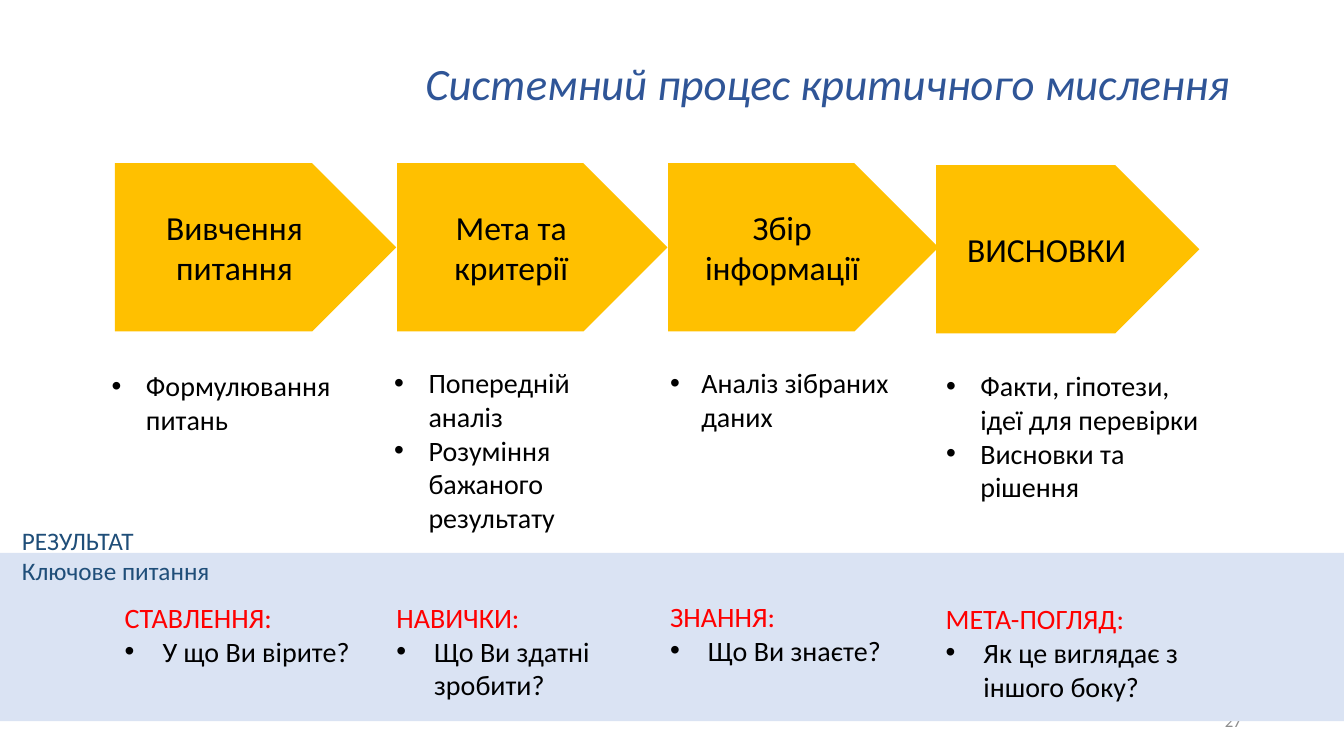
from dataclasses import dataclass

from lxml.etree import SubElement
from pptx import Presentation
from pptx.dml.color import RGBColor
from pptx.enum.shapes import MSO_SHAPE as Shape
from pptx.enum.text import MSO_ANCHOR as Anchor, MSO_AUTO_SIZE as AutoSize, PP_ALIGN as Align
from pptx.oxml.ns import qn
from pptx.util import Pt

TITLE = "Системний процес критичного мислення"
RESULT_LABEL = ["РЕЗУЛЬТАТ", "Ключове питання"]
PAGE_NUMBER = "27"

# Boxes are (left, top, width, height) in points.
STAGES = [
    {
        "name": "Вивчення питання", "arrow": (82, 116.6, 201, 120.2),
        "tasks": ["Формулювання питань"], "tasks_box": (72.7, 260, 187.2, 55.4), "indent": 24.5,
        "focus": "СТАВЛЕННЯ:", "question": "У що Ви вірите?", "question_box": (82, 425.5, 193, 55.4),
    },
    {
        "name": "Мета та критерії", "arrow": (283.6, 116.6, 193.2, 120.2),
        "tasks": ["Попередній аналіз", "Розуміння бажаного результату"],
        "tasks_box": (274.5, 257.8, 167, 128.2), "indent": 24.5,
        "focus": "НАВИЧКИ:", "question": "Що Ви здатні зробити?", "question_box": (276, 425.5, 178.6, 80),
    },
    {
        "name": "Збір інформації", "arrow": (477.2, 116.6, 193.2, 120.2),
        "tasks": ["Аналіз зібраних даних"], "tasks_box": (471.6, 257.8, 191.5, 128.2), "indent": 22.3,
        "focus": "ЗНАННЯ:", "question": "Що Ви знаєте?", "question_box": (471.6, 424.8, 224.6, 55.4),
    },
    {
        "name": "ВИСНОВКИ", "arrow": (668.7, 118, 188, 120.2),
        "tasks": ["Факти, гіпотези, ідеї для перевірки", "Висновки та рішення"],
        "tasks_box": (668.7, 260, 206.6, 104.4), "indent": 24.5,
        "focus": "МЕТА-ПОГЛЯД:", "question": "Як це виглядає з іншого боку?",
        "question_box": (668.4, 426.4, 206.6, 80),
    },
]
TITLE_BOX = (296.6, 9.4, 620.6, 104.4)
NUMBER_BOX = (678.2, 500.4, 216, 28.8)
BAND_BOX = (0, 394.9, 960, 120.2)
RESULT_BOX = (8.6, 371.5, 173.5, 51.1)
QUESTION_INDENT = 27


@dataclass(frozen=True)
class Theme:
    font: str = "Calibri"
    title: str = "2F5597"
    arrow: str = "FFC000"
    band: str = "DAE3F3"
    text: str = "000000"
    focus: str = "FF0000"
    result: str = "1F4E79"
    number: str = "8C8C8C"
    title_size: int = 32
    arrow_size: int = 24
    body_size: int = 20
    result_size: int = 18
    number_size: int = 12


THEME = Theme()


def points(box):
    return [Pt(length) for length in box]


def style(paragraph, size, color, align=Align.LEFT, italic=False):
    paragraph.alignment = align
    for run in paragraph.runs:
        run.font.name = THEME.font
        run.font.size = Pt(size)
        run.font.italic = italic
        run.font.color.rgb = RGBColor.from_string(color)


def add_bullet(paragraph, indent):
    properties = paragraph._p.get_or_add_pPr()
    properties.set("marL", str(Pt(indent)))
    properties.set("indent", str(-Pt(indent)))
    SubElement(properties, qn("a:buFont"), typeface="Arial")
    SubElement(properties, qn("a:buChar"), char="•")


def add_text(slide, box, lines, size, align=Align.LEFT, anchor=Anchor.TOP):
    """Lines are (text, color, bullet indent or 0)."""
    frame = slide.shapes.add_textbox(*points(box)).text_frame
    frame.word_wrap = True
    frame.vertical_anchor = anchor
    for position, (text, color, indent) in enumerate(lines):
        paragraph = frame.add_paragraph() if position else frame.paragraphs[0]
        paragraph.text = text
        if indent:
            add_bullet(paragraph, indent)
        style(paragraph, size, color, align)


def add_filled(slide, kind, box, color):
    shape = slide.shapes.add_shape(kind, *points(box))
    shape.shadow.inherit = False
    shape.fill.solid()
    shape.fill.fore_color.rgb = RGBColor.from_string(color)
    shape.line.fill.background()
    return shape


def add_title(slide):
    title = slide.shapes.title
    title.left, title.top, title.width, title.height = points(TITLE_BOX)
    frame = title.text_frame
    frame.text = TITLE
    frame.word_wrap = True
    frame.auto_size = AutoSize.NONE
    frame.vertical_anchor = Anchor.MIDDLE
    frame.paragraphs[0].line_spacing = 0.9
    style(frame.paragraphs[0], THEME.title_size, THEME.title, italic=True)


def add_arrow(slide, stage):
    frame = add_filled(slide, Shape.PENTAGON, stage["arrow"], THEME.arrow).text_frame
    frame.text = stage["name"]
    frame.word_wrap = True
    frame.vertical_anchor = Anchor.MIDDLE
    style(frame.paragraphs[0], THEME.arrow_size, THEME.text, Align.CENTER)


def main():
    deck = Presentation()
    deck.slide_width, deck.slide_height = Pt(960), Pt(540)
    slide = deck.slides.add_slide(deck.slide_layouts[5])
    add_title(slide)
    add_text(slide, NUMBER_BOX, [(PAGE_NUMBER, THEME.number, 0)], THEME.number_size,
             Align.RIGHT, Anchor.MIDDLE)
    add_filled(slide, Shape.RECTANGLE, BAND_BOX, THEME.band)
    for stage in STAGES:
        add_arrow(slide, stage)
        tasks = [(task, THEME.text, stage["indent"]) for task in stage["tasks"]]
        add_text(slide, stage["tasks_box"], tasks, THEME.body_size)
        add_text(slide, stage["question_box"],
                 [(stage["focus"], THEME.focus, 0),
                  (stage["question"], THEME.text, QUESTION_INDENT)], THEME.body_size)
    add_text(slide, RESULT_BOX, [(label, THEME.result, 0) for label in RESULT_LABEL],
             THEME.result_size)
    deck.save("out.pptx")


if __name__ == "__main__":
    main()
